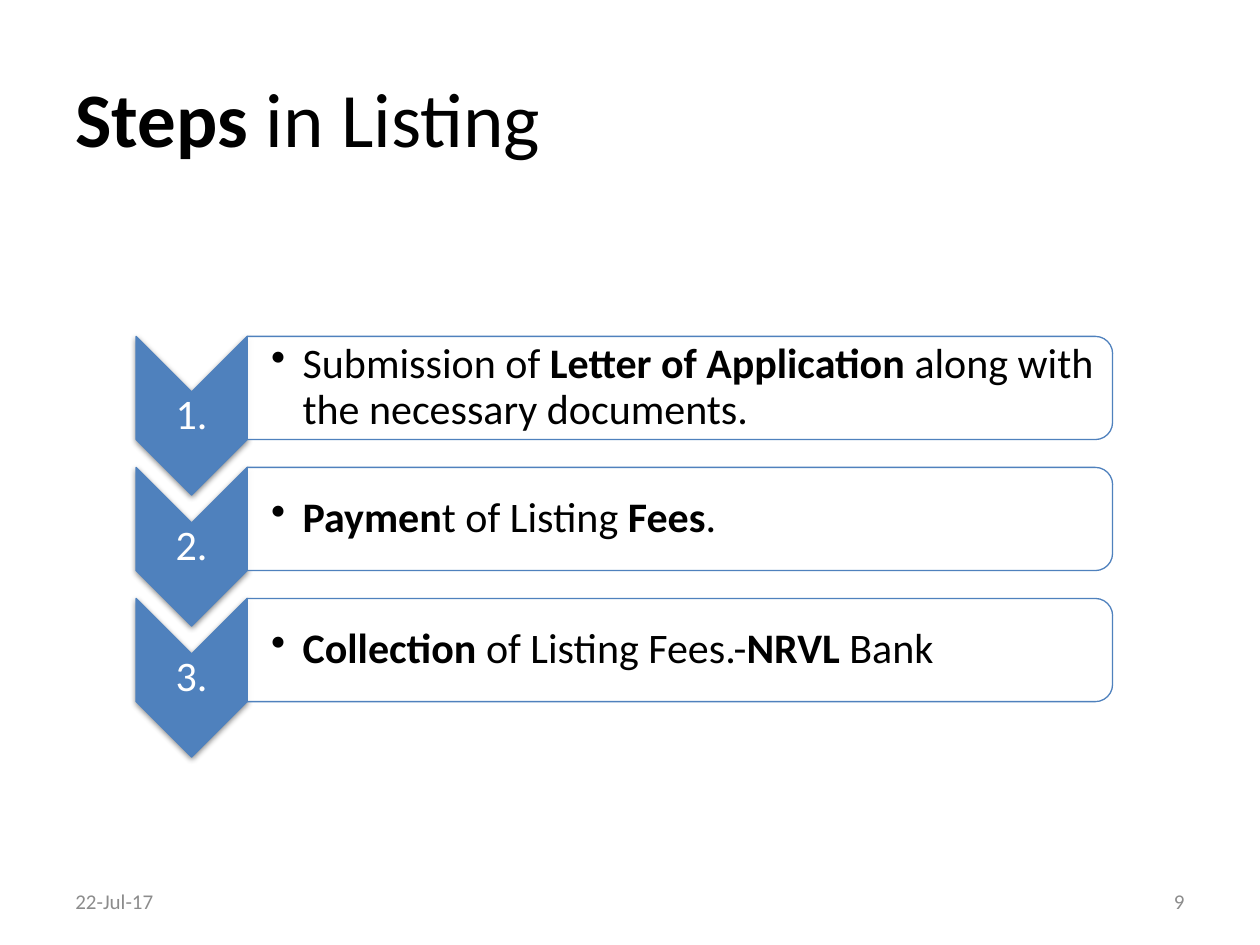
from lxml import etree
from pptx import Presentation
from pptx.dml.color import RGBColor
from pptx.enum.shapes import MSO_SHAPE as SHAPE
from pptx.enum.text import MSO_ANCHOR as ANCHOR, PP_ALIGN as ALIGN
from pptx.oxml.ns import qn
from pptx.util import Inches, Pt

COLORS = {"accent": "4F81BD", "white": "FFFFFF", "black": "000000", "grey": "8C8C8C"}
FONT = "Calibri"
STEPS = [
    [("Submission of ", False), ("Letter of Application ", True),
     ("along with the necessary documents.", False)],
    [("Paymen", True), ("t of Listing", False), (" Fees", True), (".", False)],
    [("Collection", True), (" of Listing Fees.-", False), ("NRVL", True), (" Bank", False)],
]


def rgb(name):
    return RGBColor.from_string(COLORS[name])


def add_runs(p, runs, size, color):
    for text, bold in runs:
        r = p.add_run()
        r.text = text
        r.font.name = FONT
        r.font.size = Pt(size)
        r.font.bold = bold
        r.font.color.rgb = rgb(color)


def add_text(s, box, runs, size, color, align=ALIGN.LEFT, insets=None, spacing=None):
    tf = s.shapes.add_textbox(*map(Inches, box)).text_frame
    tf.word_wrap = True
    tf.vertical_anchor = ANCHOR.MIDDLE
    if insets:
        tf.margin_left, tf.margin_top, tf.margin_right, tf.margin_bottom = map(Inches, insets)
    p = tf.paragraphs[0]
    p.alignment = align
    p.line_spacing = spacing
    add_runs(p, runs, size, color)
    return p


def add_turned(s, kind, box, fill):
    x, y, w, h = box
    turned = (x + (w - h) / 2, y + (h - w) / 2, h, w)
    sp = s.shapes.add_shape(kind, *map(Inches, turned))
    sp.rotation = 90
    sp.shadow.inherit = False
    sp.fill.solid()
    sp.fill.fore_color.rgb = rgb(fill)
    sp.line.color.rgb = rgb("accent")
    sp.line.width = Pt(0.75)
    return sp


def add_alpha(clr, percent):
    etree.SubElement(clr, qn("a:alpha"), val=str(percent * 1000))


def add_shadow(sp):
    effects = sp._element.spPr.find(qn("a:effectLst"))
    shadow = etree.SubElement(effects, qn("a:outerShdw"), blurRad=str(Pt(3.5)),
                              dist=str(Pt(1.1)), dir="5400000", rotWithShape="0")
    add_alpha(etree.SubElement(shadow, qn("a:srgbClr"), val=COLORS["black"]), 45)


def add_bullet(p, indent):
    pPr = p._p.get_or_add_pPr()
    pPr.set("marL", str(Inches(indent)))
    pPr.set("indent", str(-Inches(indent)))
    etree.SubElement(pPr, qn("a:buChar"), char="•")


def add_title(s, box, runs):
    sp = s.shapes.title
    sp.left, sp.top, sp.width, sp.height = map(Inches, box)
    tf = sp.text_frame
    tf.vertical_anchor = ANCHOR.MIDDLE
    p = tf.paragraphs[0]
    p.alignment = ALIGN.LEFT
    add_runs(p, runs, 44, "black")


def add_step(s, box, number, runs):
    x, y, w, h = box
    arrow_w, panel_h = h * 0.7, h * 0.65
    panel_x, panel_w = x + arrow_w, w - arrow_w

    add_shadow(add_turned(s, SHAPE.CHEVRON, (x, y, arrow_w, h), "accent"))
    add_text(s, (x, y + h * 0.35, arrow_w, h * 0.3), [(f"{number}.", False)], 24, "white",
             ALIGN.CENTER, (0.02,) * 4, 0.9)

    panel = add_turned(s, SHAPE.ROUND_2_SAME_RECTANGLE, (panel_x, y, panel_w, panel_h), "white")
    add_alpha(panel._element.spPr.find(qn("a:solidFill"))[0], 90)
    p = add_text(s, (panel_x, y + 0.04, panel_w - 0.04, panel_h - 0.08), runs, 24, "black",
                 insets=(0.19, 0.02, 0.02, 0.02), spacing=0.9)
    add_bullet(p, 0.25)


def add_steps(s, box, steps):
    x, y, w, h = box
    step_h = 1.26
    pitch = (h - step_h) / (len(steps) - 1)
    for i, runs in enumerate(steps):
        add_step(s, (x, y + i * pitch, w, step_h), i + 1, runs)


def add_footer(s, box, date, number):
    x, y, w, h = box
    part = 2.33
    add_text(s, (x, y, part, h), [(date, False)], 12, "grey")
    add_text(s, (x + w - part, y, part, h), [(number, False)], 12, "grey", ALIGN.RIGHT)


def main():
    prs = Presentation()
    prs.slide_width, prs.slide_height = Inches(10), Inches(7.5)
    s = prs.slides.add_slide(prs.slide_layouts[5])
    add_title(s, (0.5, 0.3, 9, 1.25), [("Steps", True), (" in Listing", False)])
    add_steps(s, (1.08, 2.67, 7.75, 3.34), STEPS)
    add_footer(s, (0.5, 6.95, 9, 0.4), "22-Jul-17", "9")
    prs.save("out.pptx")


if __name__ == "__main__":
    main()
